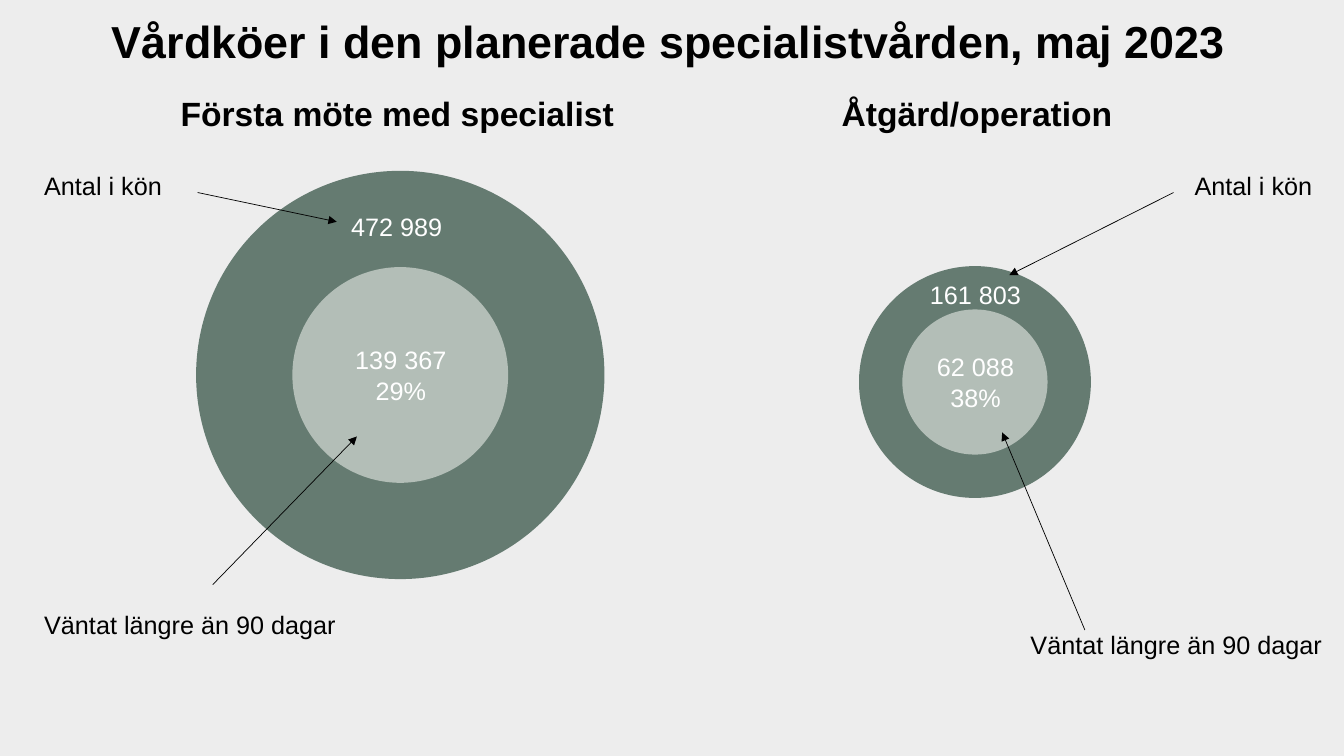
from dataclasses import dataclass

from lxml import etree
from pptx import Presentation
from pptx import util as u
from pptx.dml.color import RGBColor
from pptx.enum import shapes, text
from pptx.oxml import ns

PX = 9144  # EMU, 100 px to the inch
LEFT, CENTER, RIGHT = text.PP_ALIGN.LEFT, text.PP_ALIGN.CENTER, text.PP_ALIGN.RIGHT


@dataclass(frozen=True)
class Theme:
    font: str = "Arial"
    background: str = "EDEDED"
    ink: str = "000000"
    queue: str = "657B71"
    waited: str = "B3BEB7"
    on_circle: str = "FFFFFF"
    title_size: int = 32
    heading_size: int = 24
    body_size: int = 18
    arrow_width: float = 0.5


THEME = Theme()


@dataclass(frozen=True)
class Box:
    left: int
    top: int
    width: int
    height: int


@dataclass(frozen=True)
class Panel:
    """Offsets are px from the top left corner of the panel's box."""
    heading: str
    heading_place: tuple
    center: tuple
    diameters: tuple
    queue_lines: tuple
    queue_place: tuple
    waited_lines: tuple
    waited_place: tuple
    waited_label_top: int
    labels_right: bool
    arrows: tuple


FIRST_VISIT = Panel(
    "Första möte med specialist", (95, 0, 530), (363, 285), (405, 214),
    ("472 989",), (294, 118, 131), ("139 367", "29%"), (306, 250, 115),
    513, False, ((162, 104, 300, 133), (177, 493, 320, 346)))
OPERATION = Panel(
    "Åtgärd/operation", (106, 0, 364), (286, 292), (230, 144),
    ("161 803",), (221, 185, 131), ("62 088", "38%"), (221, 257, 131),
    532, True, ((483, 104, 320, 186), (395, 538, 313, 342)))


def write_lines(frame, lines, size, color, align, bold=False):
    frame.word_wrap = True
    frame.vertical_anchor = text.MSO_ANCHOR.TOP
    for index, line in enumerate(lines):
        paragraph = frame.add_paragraph() if index else frame.paragraphs[0]
        paragraph.alignment = align
        run = paragraph.add_run()
        run.text = line
        run.font.name = THEME.font
        run.font.size = u.Pt(size)
        run.font.bold = bold
        run.font.color.rgb = RGBColor.from_string(color)


def add_text(slide, box, lines, size, color, align, bold=False):
    shape = slide.shapes.add_textbox(
        *(PX * length for length in (box.left, box.top, box.width, box.height)))
    write_lines(shape.text_frame, lines, size, color, align, bold)
    shape.text_frame.auto_size = text.MSO_AUTO_SIZE.SHAPE_TO_FIT_TEXT


def add_circle(slide, center_x, center_y, diameter, color):
    left, top = center_x - diameter / 2, center_y - diameter / 2
    shape = slide.shapes.add_shape(
        shapes.MSO_SHAPE.OVAL,
        *(int(PX * length) for length in (left, top, diameter, diameter)))
    shape.shadow.inherit = False
    shape.fill.solid()
    shape.fill.fore_color.rgb = RGBColor.from_string(color)
    shape.line.fill.background()


def add_arrow(slide, points):
    arrow = slide.shapes.add_connector(
        shapes.MSO_CONNECTOR.STRAIGHT, *(PX * point for point in points))
    arrow.line.color.rgb = RGBColor.from_string(THEME.ink)
    arrow.line.width = u.Pt(THEME.arrow_width)
    properties = arrow._element.spPr
    line = properties.find(ns.qn("a:ln"))
    etree.SubElement(line, ns.qn("a:tailEnd"), type="triangle")
    etree.SubElement(properties, ns.qn("a:effectLst"))


def add_title(slide, box):
    title = slide.shapes.title
    title.left, title.top = PX * box.left, PX * box.top
    title.width, title.height = PX * box.width, PX * box.height
    write_lines(title.text_frame, ["Vårdköer i den planerade specialistvården, maj 2023"],
                THEME.title_size, THEME.ink, LEFT, bold=True)
    title.text_frame.auto_size = text.MSO_AUTO_SIZE.NONE


def add_panel(slide, box, panel):
    def place(offset, height):
        left, top, width = offset
        return Box(box.left + left, box.top + top, width, height)

    for diameter, color in zip(panel.diameters, (THEME.queue, THEME.waited)):
        add_circle(slide, box.left + panel.center[0], box.top + panel.center[1],
                   diameter, color)

    add_text(slide, place(panel.heading_place, 50), [panel.heading],
             THEME.heading_size, THEME.ink, CENTER, bold=True)

    labels = (("Antal i kön", 77, 146, LEFT),
              ("Väntat längre än 90 dagar", panel.waited_label_top, 440,
               RIGHT if panel.labels_right else LEFT))
    for label, top, width, align in labels:
        left = box.width - width if panel.labels_right else 0
        add_text(slide, place((left, top, width), 40), [label],
                 THEME.body_size, THEME.ink, align)

    for lines, offset in ((panel.queue_lines, panel.queue_place),
                          (panel.waited_lines, panel.waited_place)):
        add_text(slide, place(offset, 9 + 31 * len(lines)), lines,
                 THEME.body_size, THEME.on_circle, CENTER)

    for start_x, start_y, end_x, end_y in panel.arrows:
        add_arrow(slide, (box.left + start_x, box.top + start_y,
                          box.left + end_x, box.top + end_y))


def main():
    presentation = Presentation()
    presentation.slide_width, presentation.slide_height = 1333 * PX, 750 * PX
    slide = presentation.slides.add_slide(presentation.slide_layouts[5])
    slide.background.fill.solid()
    slide.background.fill.fore_color.rgb = RGBColor.from_string(THEME.background)
    add_title(slide, Box(101, 9, 1175, 64))
    add_panel(slide, Box(34, 87, 640, 572), FIRST_VISIT)
    add_panel(slide, Box(681, 87, 640, 572), OPERATION)
    presentation.save("out.pptx")


if __name__ == "__main__":
    main()
